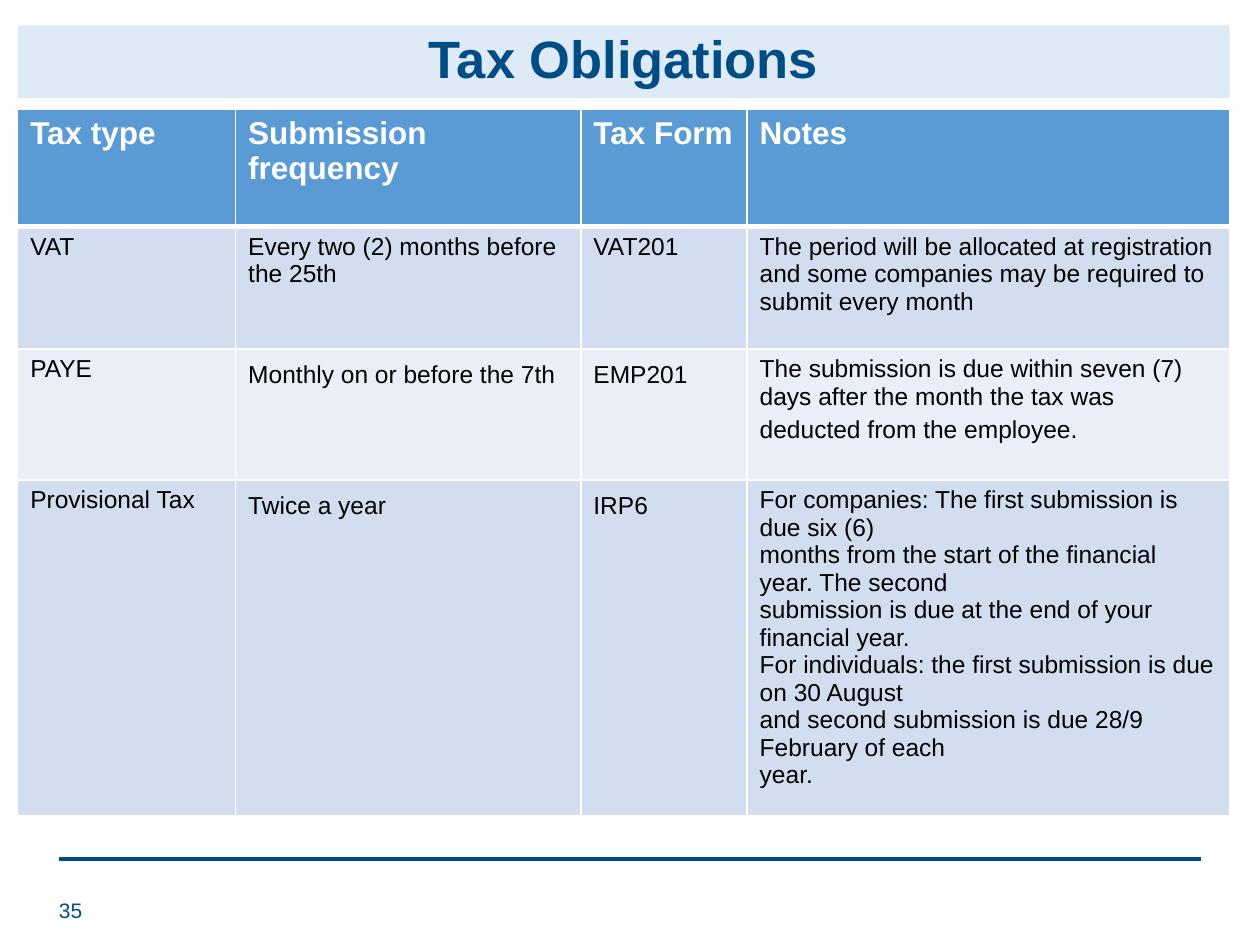
from dataclasses import dataclass
from pptx import Presentation
from pptx.dml.color import RGBColor as RGB
from pptx.enum.shapes import MSO_CONNECTOR as Conn
from pptx.enum.text import MSO_ANCHOR as Anchor, MSO_AUTO_SIZE as Fit, PP_ALIGN as Align
from pptx.oxml.ns import qn
from pptx.util import Inches, Pt
from lxml.etree import SubElement as Sub


@dataclass(frozen=True)
class Theme:
    font: str = "Arial"
    navy: str = "004C85"
    pale: str = "DEEBF7"
    head: str = "5B9BD5"
    bands: tuple = ("D2DEEF", "EAEFF7")
    white: str = "FFFFFF"
    black: str = "000000"
    title: int = 30
    label: int = 18
    body: int = 14
    small: int = 12


T = Theme()
WIDE, HIGH = 10, 7.5
LEFT, SPAN = 0.014, 0.962
COLS = (1.73, 2.74, 1.32, 3.83)
ROWS = (0.93, 0.97, 1.04, 2.5)
TALL = {(2, 1), (2, 2), (2, 3), (3, 1), (3, 2)}
DATA = (
    ("Tax type", "Submission frequency", "Tax Form", "Notes"),
    ("VAT", "Every two (2) months before the 25th", "VAT201",
     "The period will be allocated at registration and some companies "
     "may be required to submit every month"),
    ("PAYE", "Monthly on or before the 7th", "EMP201",
     "The submission is due within seven (7) days after the month the tax was "
     "deducted from the employee."),
    ("Provisional Tax", "Twice a year", "IRP6",
     "For companies: The first submission is due six (6)\n"
     "months from the start of the financial year. The second\n"
     "submission is due at the end of your financial year.\n"
     "For individuals: the first submission is due on 30 August\n"
     "and second submission is due 28/9 February of each\n"
     "year."),
)


def area(left, top, width, height):
    return (Inches(left * WIDE), Inches(top * HIGH),
            Inches(width * WIDE), Inches(height * HIGH))


def write(frame, text, size=T.body, color=T.black, bold=False,
          align=Align.LEFT, space=None, tail=None):
    frame.text = text
    for para in frame.paragraphs:
        para.alignment = align
        para.line_spacing = space
        if tail:
            para.add_run().text = " "
        for run in para.runs:
            font = run.font
            font.name, font.size, font.bold = T.font, Pt(size), bold
            font.color.rgb = RGB.from_string(color)
        if tail:
            para.runs[-1].font.size = Pt(tail)


def paint(fill, color):
    fill.solid()
    fill.fore_color.rgb = RGB.from_string(color)


def edge(cell, row):
    props = cell._tc.get_or_add_tcPr()
    for side in "LRTB":
        thick = (row, side) in ((0, "B"), (1, "T"))
        line = Sub(props, qn(f"a:ln{side}"), w=str(Pt(3 if thick else 1)))
        Sub(Sub(line, qn("a:solidFill")), qn("a:srgbClr"), val=T.white)


def add_title(slide, text):
    box = slide.shapes.title
    box.left, box.top, box.width, box.height = area(LEFT, 0.027, SPAN, 0.077)
    paint(box.fill, T.pale)
    frame = box.text_frame
    frame.auto_size = Fit.NONE
    frame.vertical_anchor = Anchor.MIDDLE
    write(frame, text, size=T.title, color=T.navy, bold=True,
          align=Align.CENTER, space=0.9)


def add_grid(slide):
    place = area(LEFT, 0.116, SPAN, sum(ROWS) / HIGH)
    table = slide.shapes.add_table(len(ROWS), len(COLS), *place).table
    for col, width in zip(table.columns, COLS):
        col.width = Inches(width)
    for r, (texts, height) in enumerate(zip(DATA, ROWS)):
        table.rows[r].height = Inches(height)
        for c, text in enumerate(texts):
            cell = table.cell(r, c)
            edge(cell, r)
            if r == 0:
                paint(cell.fill, T.head)
                write(cell.text_frame, text, size=T.label, color=T.white, bold=True)
            else:
                paint(cell.fill, T.bands[(r - 1) % 2])
                write(cell.text_frame, text,
                      tail=T.label if (r, c) in TALL else None)


def add_rule(slide):
    x, y, width, _ = area(0.047, 0.909, 0.906, 0)
    rule = slide.shapes.add_connector(Conn.STRAIGHT, x, y, x + width, y)
    rule.line.color.rgb = RGB.from_string(T.navy)
    rule.line.width = Pt(2)
    Sub(rule._element.spPr, qn("a:effectLst"))


def add_page(slide, text):
    frame = slide.shapes.add_textbox(*area(0.037, 0.937, 0.046, 0.053)).text_frame
    frame.word_wrap = True
    frame.vertical_anchor = Anchor.MIDDLE
    write(frame, text, size=T.small, color=T.navy)


def main():
    deck = Presentation()
    deck.slide_width, deck.slide_height = Inches(WIDE), Inches(HIGH)
    slide = deck.slides.add_slide(deck.slide_layouts[5])
    add_rule(slide)
    add_page(slide, "35")
    add_grid(slide)
    add_title(slide, "Tax Obligations")
    deck.save("out.pptx")


if __name__ == "__main__":
    main()
